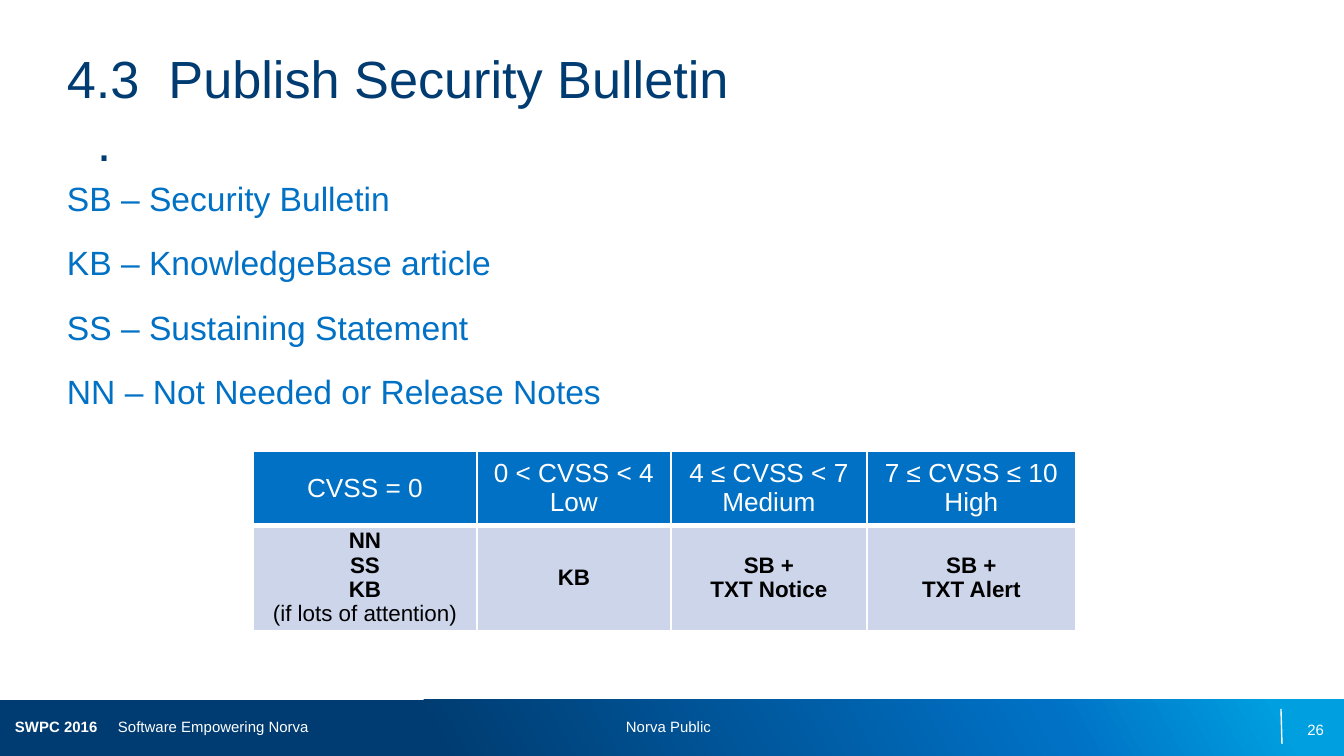
from copy import deepcopy
from typing import NamedTuple

from lxml.etree import SubElement
from pptx import Presentation
from pptx.dml.color import RGBColor
from pptx.enum.shapes import MSO_CONNECTOR, MSO_SHAPE
from pptx.enum.text import MSO_ANCHOR, PP_ALIGN
from pptx.oxml.ns import qn
from pptx.util import Emu, Pt

EMU_PER_PX = 914400 / 134.4
FONT = "Arial"
NAVY, BLUE, CYAN = "003C71", "0071C5", "009FDF"
WHITE, BLACK, PALE = "FFFFFF", "000000", "CCD5EA"


class Label(NamedTuple):
    text: str
    left: int
    top: int
    width: int
    height: int
    size: int
    color: str
    align: PP_ALIGN = PP_ALIGN.LEFT
    anchor: MSO_ANCHOR = MSO_ANCHOR.TOP
    gap: float = 0  # points before each later paragraph


class RowStyle(NamedTuple):
    height: int
    fill: str
    color: str
    size: int
    bold: bool
    bottom: int  # points
    texts: tuple[str, ...]


LABELS = {
    "title": Label("4.3  Publish Security Bulletin\n.", 67, 46, 1210, 128, 28, NAVY),
    "terms": Label("SB – Security Bulletin\nKB – KnowledgeBase article\n"
                   "SS – Sustaining Statement\nNN – Not Needed or Release Notes",
                   67, 178, 562, 504, 18, BLUE, gap=12.8),
    "event": Label("SWPC 2016\tSoftware Empowering Norva", 15, 707, 313, 40, 8, WHITE,
                   anchor=MSO_ANCHOR.MIDDLE),
    "class": Label("Norva Public", 512, 707, 313, 40, 8, WHITE,
                   PP_ALIGN.CENTER, MSO_ANCHOR.MIDDLE),
    "number": Label("26", 1011, 710, 313, 40, 8, WHITE,
                    PP_ALIGN.RIGHT, MSO_ANCHOR.MIDDLE),
}
COLUMNS = (224, 194, 196, 209)
ROWS = (
    RowStyle(75, BLUE, WHITE, 14, False, 3,
             ("CVSS = 0", "0 < CVSS < 4\nLow", "4 ≤ CVSS < 7\nMedium",
              "7 ≤ CVSS ≤ 10\nHigh")),
    RowStyle(99, PALE, BLACK, 12, True, 1,
             ("NN\nSS\nKB\n(if lots of attention)", "KB", "SB +\nTXT Notice",
              "SB +\nTXT Alert")),
)


def px(n: int) -> Emu:
    return Emu(round(n * EMU_PER_PX))


def rgb(color: str) -> RGBColor:
    return RGBColor.from_string(color)


def style_runs(p, size: int, color: str, bold: bool = False) -> None:
    for r in p.runs:
        r.font.name, r.font.size, r.font.bold = FONT, Pt(size), bold
        r.font.color.rgb = rgb(color)


def add_label(s, label: Label):
    box = s.shapes.add_textbox(px(label.left), px(label.top),
                               px(label.width), px(label.height))
    tf = box.text_frame
    tf.word_wrap, tf.vertical_anchor = True, label.anchor
    tf.margin_left = tf.margin_right = tf.margin_top = tf.margin_bottom = 0
    tf.text = label.text
    for i, p in enumerate(tf.paragraphs):
        p.alignment = label.align
        if i and label.gap:
            p.space_before = Pt(label.gap)
        style_runs(p, label.size, label.color)
    return tf


def add_border(cell, side: str, width: int) -> None:
    ln = SubElement(cell._tc.get_or_add_tcPr(), qn(f"a:{side}"), w=str(Pt(width)))
    fill = SubElement(ln, qn("a:solidFill"))
    SubElement(fill, qn("a:srgbClr"), val=WHITE)


def fill_cell(cell, text: str, row: RowStyle) -> None:
    for side in ("lnL", "lnR", "lnT"):
        add_border(cell, side, 1)
    add_border(cell, "lnB", row.bottom)
    cell.fill.solid()
    cell.fill.fore_color.rgb = rgb(row.fill)
    cell.vertical_anchor = MSO_ANCHOR.MIDDLE
    cell.margin_left = cell.margin_right = px(8)
    cell.margin_top = cell.margin_bottom = 0
    cell.text_frame.text = text
    for p in cell.text_frame.paragraphs:
        p.alignment, p.line_spacing = PP_ALIGN.CENTER, 0.97
        style_runs(p, row.size, row.color, row.bold and not p.text.startswith("("))


def add_footer_bar(s) -> None:
    bar = s.shapes.add_shape(MSO_SHAPE.RECTANGLE, 0, px(700), px(1344), px(56))
    bar.shadow.inherit = False
    bar.line.fill.background()
    bar.fill.gradient()
    bar.fill.gradient_angle = 29
    stops = bar._element.spPr.find(".//" + qn("a:gsLst"))
    stops.append(deepcopy(stops[-1]))
    for stop, position, color in zip(bar.fill.gradient_stops,
                                     (0.32, 0.78, 0.95), (NAVY, BLUE, CYAN)):
        stop.position, stop.color.rgb = position, rgb(color)

    divider = s.shapes.add_connector(MSO_CONNECTOR.STRAIGHT,
                                     px(1281), px(709), px(1282), px(744))
    divider.line.color.rgb, divider.line.width = rgb(WHITE), Pt(0.75)
    SubElement(divider._element.spPr, qn("a:effectLst"))


def add_severity_table(s) -> None:
    table = s.shapes.add_table(len(ROWS), len(COLUMNS), px(253), px(451),
                               px(sum(COLUMNS)), px(sum(r.height for r in ROWS))).table
    for column, width in zip(table.columns, COLUMNS):
        column.width = px(width)
    for i, row in enumerate(ROWS):
        table.rows[i].height = px(row.height)
        for j, text in enumerate(row.texts):
            fill_cell(table.cell(i, j), text, row)


def main() -> None:
    prs = Presentation()
    prs.slide_width, prs.slide_height = px(1344), px(756)
    s = prs.slides.add_slide(prs.slide_layouts[6])

    add_footer_bar(s)
    frames = {name: add_label(s, label) for name, label in LABELS.items()}

    # Indented full stop under the title
    pPr = frames["title"].paragraphs[1]._p.get_or_add_pPr()
    pPr.set("marL", str(px(30)))

    # Event name in bold, slogan at a tab stop
    p = frames["event"].paragraphs[0]
    tabs = SubElement(p._p.get_or_add_pPr(), qn("a:tabLst"))
    SubElement(tabs, qn("a:tab"), pos=str(px(103)), algn="l")
    event, slogan = p.text.split("\t")
    p.text = event
    p.add_run().text = "\t" + slogan
    style_runs(p, 8, WHITE)
    p.runs[0].font.bold = True

    add_severity_table(s)
    prs.save("out.pptx")


if __name__ == "__main__":
    main()
